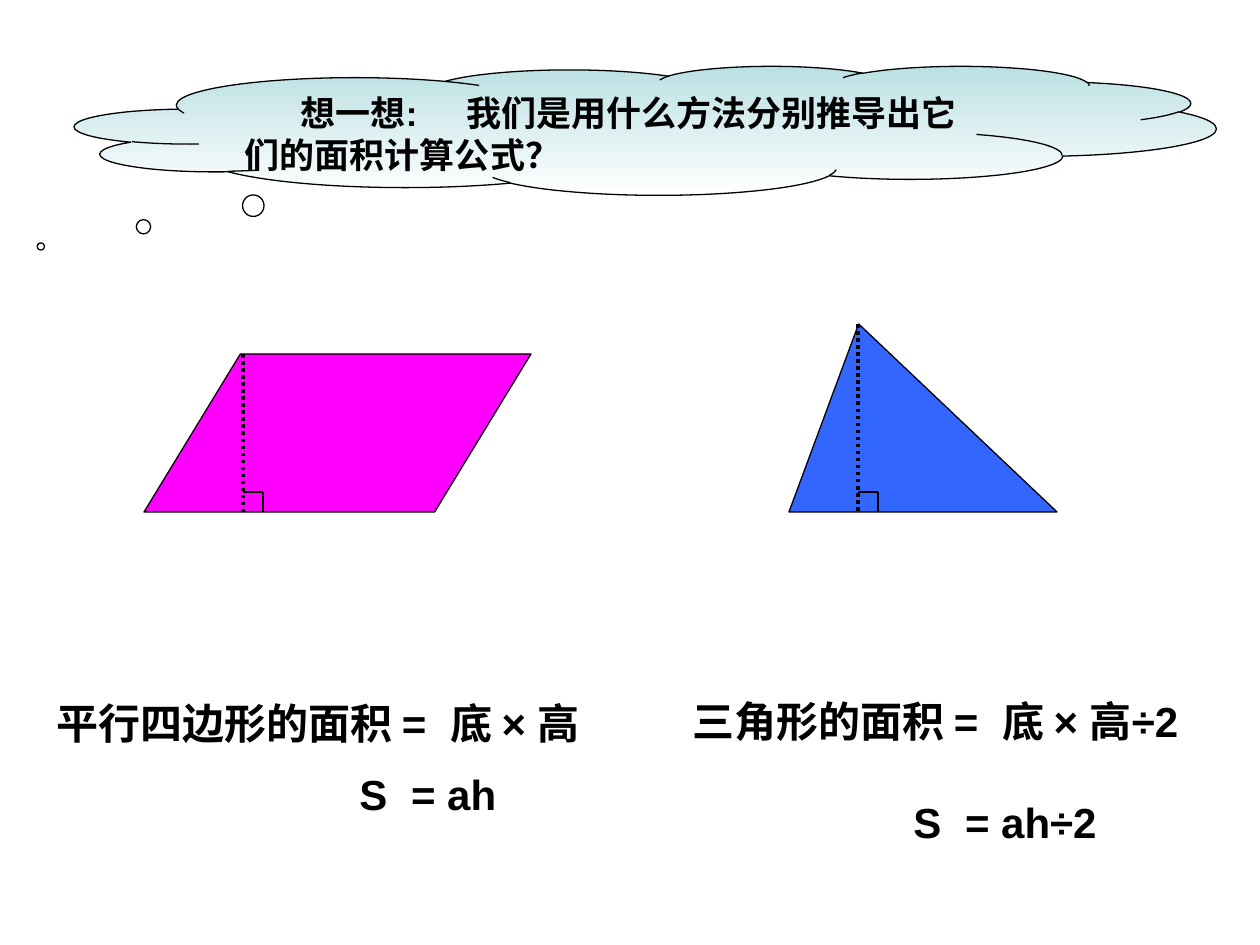
from lxml import etree
from pptx import Presentation, util as u
from pptx.dml.color import RGBColor
from pptx.enum import dml, shapes, text
from pptx.oxml.ns import qn

COLORS = {"ink": "000000", "magenta": "FF00FF", "blue": "3366FF",
          "mist": "BBE0E3", "white": "FFFFFF"}
SHAPE = shapes.MSO_SHAPE


def px(n):
    return round(n * 914400 / 126)


def rgb(name):
    return RGBColor.from_string(COLORS[name])


class Board:
    font = "Arial"

    def __init__(self, slide):
        self.slide = slide
        self.group = slide.shapes.add_group_shape()

    def shape(self, parent, kind, box, adjustments):
        sp = parent.shapes.add_shape(kind, *map(px, box))
        for i, value in enumerate(adjustments):
            sp.adjustments[i] = value
        sp.shadow.inherit = False
        sp.line.color.rgb = rgb("ink")
        sp.line.width = u.Pt(0.75)
        return sp

    def figure(self, kind, box, adjustment, color):
        sp = self.shape(self.group, kind, box, [adjustment])
        sp.fill.solid()
        sp.fill.fore_color.rgb = rgb(color)

    def line(self, x1, y1, x2, y2, width=0.75, dash=None):
        ln = self.group.shapes.add_connector(
            shapes.MSO_CONNECTOR.STRAIGHT, *map(px, (x1, y1, x2, y2)))
        ln.line.color.rgb = rgb("ink")
        ln.line.width = u.Pt(width)
        if dash:
            ln.line.dash_style = dash
        etree.SubElement(ln._element.spPr, qn("a:effectLst"))

    def height(self, x, top, base, corner=20):
        self.line(x, top, x, base, 2, dml.MSO_LINE.ROUND_DOT)
        self.line(x, base - corner, x + corner, base - corner)
        self.line(x + corner, base - corner, x + corner, base)

    def run(self, p, content, size, gap=0):
        r = p.add_run()
        r.text = content
        r.font.name = self.font
        r.font.size = u.Pt(size)
        r.font.bold = True
        r.font.color.rgb = rgb("ink")
        if gap:
            r._r.get_or_add_rPr().set("spc", str(round(gap * 100 * 72 / 126)))

    def paragraph(self, p, before_gap, after_gap, size, gap, indent=0, before=0):
        p.alignment = text.PP_ALIGN.LEFT
        p.space_before = u.Pt(before)
        pPr = p._p.get_or_add_pPr()
        pPr.set("marL", "0")
        pPr.set("indent", str(px(indent)))
        self.run(p, before_gap, size)
        self.run(p, " ", size, gap)
        self.run(p, after_gap, size)

    def cloud(self, box, adjustments, heading, question, gap, indent):
        sp = self.shape(self.slide, SHAPE.CLOUD_CALLOUT, box, adjustments)
        sp.fill.gradient()
        sp.fill.gradient_angle = 270
        for stop, name in zip(sp.fill.gradient_stops, ("mist", "white")):
            stop.color.rgb = rgb(name)
        tf = sp.text_frame
        tf.word_wrap = True
        tf.vertical_anchor = text.MSO_ANCHOR.TOP
        self.paragraph(tf.paragraphs[0], heading, question, 20, gap, indent)

    def formula(self, box, words, symbols, indent, before, gap=12):
        tf = self.slide.shapes.add_textbox(*map(px, box)).text_frame
        tf.word_wrap = True
        self.paragraph(tf.paragraphs[0], *words, 24, gap)
        self.paragraph(tf.add_paragraph(), *symbols, 24, gap, indent, before)


def main():
    prs = Presentation()
    prs.slide_width, prs.slide_height = px(1260), px(945)
    s = Board(prs.slides.add_slide(prs.slide_layouts[6]))

    base = 512
    s.figure(SHAPE.PARALLELOGRAM, (144, 354, 387, base - 354), 0.61, "magenta")
    s.height(243, 354, base)
    s.figure(SHAPE.ISOSCELES_TRIANGLE, (789, 324, 268, base - 324), 0.26, "blue")
    s.height(858, 324, base)

    s.cloud((75, 66, 1141, 129), (-0.53, 0.9),
            "想一想:", "我们是用什么方法分别推导出它们的面积计算公式？", 39, 56)
    s.formula((44, 691, 586, 139), ("平行四边形的面积 =", "底 × 高"),
              ("S", "= ah"), 303, 12)
    s.formula((680, 689, 580, 290), ("三角形的面积 =", "底 × 高÷2"),
              ("S", "= ah÷2"), 221, 29)
    prs.save("out.pptx")


if __name__ == "__main__":
    main()
